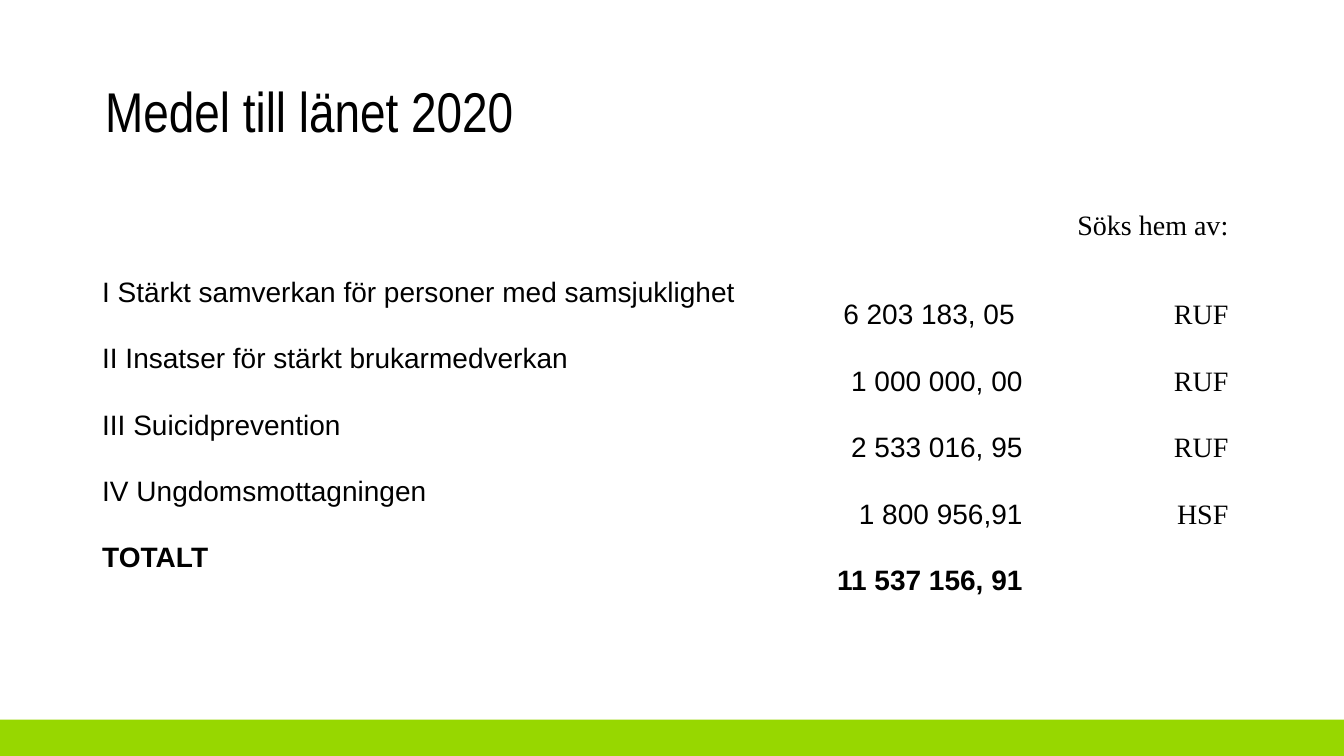
from lxml import etree
from pptx import Presentation
from pptx.dml.color import RGBColor
from pptx.enum import shapes, text
from pptx.oxml import ns
from pptx.util import Pt

BLACK = RGBColor(0x00, 0x00, 0x00)
GREEN = RGBColor(0x97, 0xD7, 0x00)
SLIDE_W, SLIDE_H = 960, 540

COLUMN_WIDTHS = [520.5, 147, 147]
COLUMN_FONTS = ["Arial", "Arial", "Times New Roman"]
ROWS = [
    ("", "", "Söks hem av:"),
    ("I Stärkt samverkan för personer med samsjuklighet", "6 203 183, 05 ", "RUF"),
    ("II Insatser för stärkt brukarmedverkan", "1 000 000, 00", "RUF"),
    ("III Suicidprevention", "2 533 016, 95", "RUF"),
    ("IV Ungdomsmottagningen", "1 800 956,91", "HSF"),
    ("TOTALT", "11 537 156, 91", ""),
]


def write(tf, words, font="Arial", size=20, bold=False,
          align=text.PP_ALIGN.LEFT, spacing=None):
    p = tf.paragraphs[0]
    p.alignment = align
    p.line_spacing = spacing
    p.font.size = Pt(size)
    if words:
        r = p.add_run()
        r.text = words
        r.font.name = font
        r.font.size = Pt(size)
        r.font.bold = bold
        r.font.color.rgb = BLACK


def clear_borders(cell):
    """Turn off the table style's lines, which would cut through tall letters."""
    tc_pr = cell._tc.get_or_add_tcPr()
    for i, side in enumerate(("lnL", "lnR", "lnT", "lnB")):
        ln = etree.Element(ns.qn(f"a:{side}"), w="0")
        etree.SubElement(ln, ns.qn("a:noFill"))
        tc_pr.insert(i, ln)


def add_footer_band(s, x, y, w, h):
    sp = s.shapes.add_shape(shapes.MSO_SHAPE.RECTANGLE, Pt(x), Pt(y), Pt(w), Pt(h))
    sp.shadow.inherit = False
    sp.fill.solid()
    sp.fill.fore_color.rgb = GREEN
    sp.line.fill.background()


def add_title(s, x, y, w, h):
    tf = s.shapes.add_textbox(Pt(x), Pt(y), Pt(w), Pt(h)).text_frame
    tf.word_wrap = True
    tf.vertical_anchor = text.MSO_ANCHOR.MIDDLE
    write(tf, "Medel till länet 2020", font="Arial Narrow", size=40, spacing=0.9)


def add_funding_table(s, x, y, w, h):
    table = s.shapes.add_table(len(ROWS), len(COLUMN_WIDTHS),
                               Pt(x), Pt(y), Pt(w), Pt(h)).table
    table.first_row = table.horz_banding = False
    for column, width in zip(table.columns, COLUMN_WIDTHS):
        column.width = Pt(width)
    for i, row in enumerate(ROWS):
        for j, words in enumerate(row):
            cell = table.cell(i, j)
            cell.fill.background()
            clear_borders(cell)
            cell.margin_left = cell.margin_right = Pt(5)
            cell.margin_top = cell.margin_bottom = 0
            centred = i > 0 and j > 0
            cell.vertical_anchor = (text.MSO_ANCHOR.MIDDLE if centred
                                    else text.MSO_ANCHOR.TOP)
            write(cell.text_frame, words, font=COLUMN_FONTS[j],
                  bold=row[0] == "TOTALT", spacing=Pt(15),
                  align=text.PP_ALIGN.RIGHT if j else text.PP_ALIGN.LEFT)


def main():
    prs = Presentation()
    prs.slide_width, prs.slide_height = Pt(SLIDE_W), Pt(SLIDE_H)
    s = prs.slides.add_slide(prs.slide_layouts[6])
    add_footer_band(s, 0, 514, SLIDE_W, 26)
    add_title(s, 68, 56.5, 824, 51)
    add_funding_table(s, 68, 157.5, sum(COLUMN_WIDTHS), 285)
    prs.save("out.pptx")


if __name__ == "__main__":
    main()
